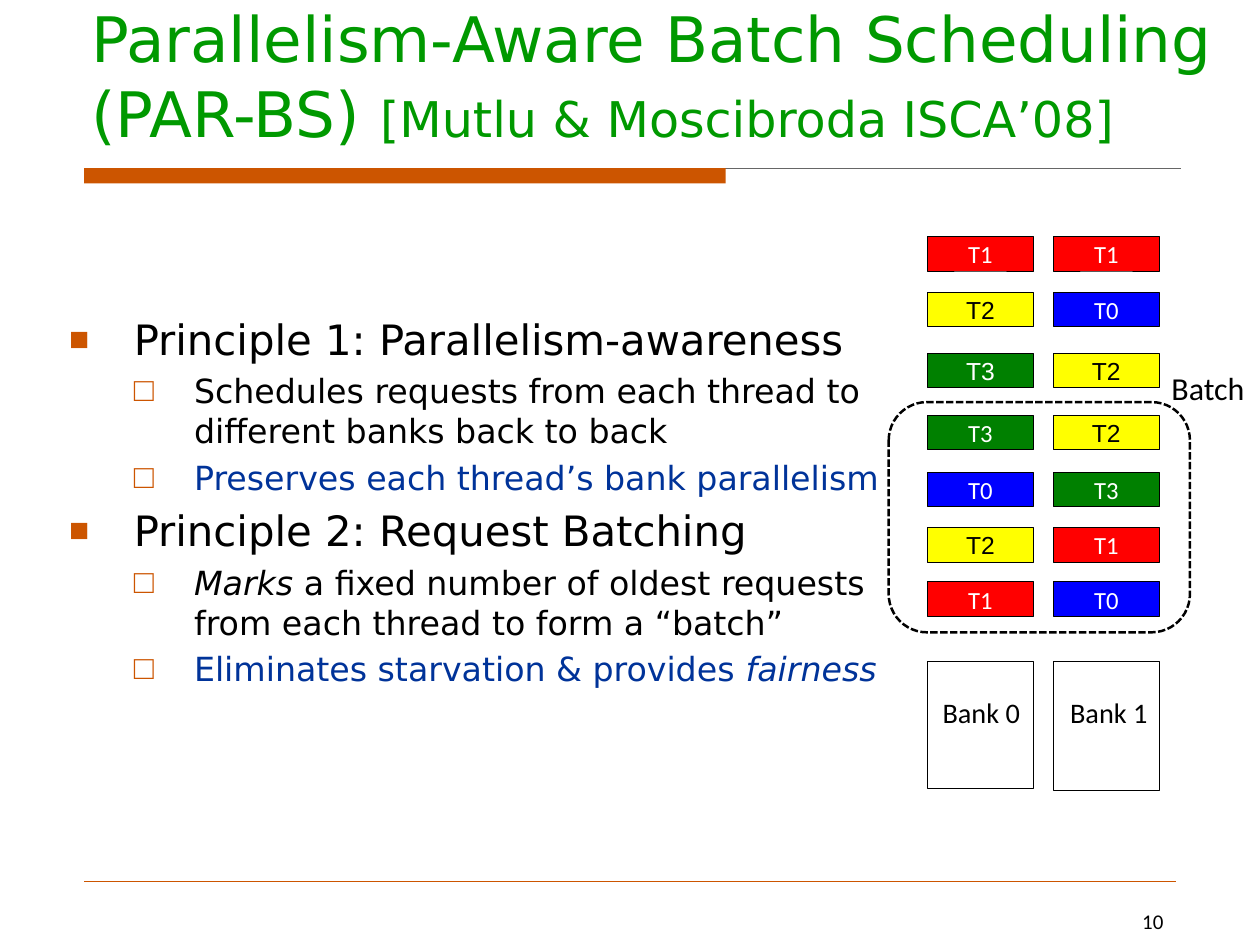
from lxml import etree
from pptx import Presentation
from pptx import util as u
from pptx.dml.color import RGBColor
from pptx.enum import dml, shapes, text
from pptx.oxml import ns

PX = 9144  # EMU per px, 100 px to the inch
BLACK = RGBColor(0, 0, 0)
WHITE = RGBColor(255, 255, 255)
GREY = RGBColor(0x66, 0x66, 0x66)
ORANGE = RGBColor(0xCC, 0x55, 0x00)
TITLE_GREEN = RGBColor(0, 0x99, 0)
NAVY = RGBColor(0, 0x33, 0x99)
RED = RGBColor(255, 0, 0)
BLUE = RGBColor(0, 0, 255)
YELLOW = RGBColor(255, 255, 0)
GREEN = RGBColor(0, 0x80, 0)

SANS, CALIBRI, ARIAL = "DejaVu Sans", "Calibri", "Arial"
MARGINS = dict(margin_left=14 * PX, margin_right=14 * PX,
               margin_top=7 * PX, margin_bottom=7 * PX)

# thread: fill, text colour, font
THREADS = {
    "T0": (BLUE, WHITE, CALIBRI),
    "T1": (RED, WHITE, CALIBRI),
    "T2": (YELLOW, BLACK, ARIAL),
    "T3": (GREEN, WHITE, CALIBRI),
}
# top within the queue, threads waiting for bank 0 and bank 1, font if special
REQUEST_ROWS = [
    (0, ("T1", "T1"), None),
    (63, ("T2", "T0"), None),
    (132, ("T3", "T2"), ARIAL),
    (202, ("T3", "T2"), None),
    (266, ("T0", "T3"), None),
    (329, ("T2", "T1"), None),
    (390, ("T1", "T0"), None),
]
# bank name, label left within the bank, bank height
BANKS = [("Bank 0", 2, 143), ("Bank 1", 4, 146)]
BANK_PITCH, BANK_WIDTH = 142, 119

# level: indent, hanging, bullet, bullet size in percent, text size
LEVELS = [(73, 73, "■", 80, 34), (141, 68, "□", 100, 27)]
# level, colour, runs of (text, italic)
PRINCIPLES = [
    (0, BLACK, [("Principle 1: Parallelism-awareness", False)]),
    (1, BLACK, [("Schedules requests from each thread to different banks back to back", False)]),
    (1, NAVY, [("Preserves each thread’s bank parallelism", False)]),
    (0, BLACK, [("Principle 2: Request Batching", False)]),
    (1, BLACK, [("Marks ", True),
                ("a fixed number of oldest requests from each thread to form a “batch”", False)]),
    (1, NAVY, [("Eliminates starvation & provides ", False), ("fairness", True)]),
]


def set_format(target, **values):
    for name, value in values.items():
        setattr(target, name, value)


def scaled(*lengths):
    return [length * PX for length in lengths]


def add_run(paragraph, words, size, font, colour, italic=False):
    run = paragraph.add_run()
    run.text = words
    set_format(run.font, size=u.Pt(size), name=font, italic=italic)
    run.font.color.rgb = colour


def place(placeholder, box, anchor):
    left, top, width, height = scaled(*box)
    set_format(placeholder, left=left, top=top, width=width, height=height)
    set_format(placeholder.text_frame, word_wrap=True, vertical_anchor=anchor,
               auto_size=text.MSO_AUTO_SIZE.NONE, **MARGINS)
    return placeholder.text_frame


def add_label(slide, box, words, size, align, wrap=False):
    frame = slide.shapes.add_textbox(*scaled(*box)).text_frame
    set_format(frame, word_wrap=wrap, **MARGINS)
    frame.paragraphs[0].alignment = align
    add_run(frame.paragraphs[0], words, size, CALIBRI, BLACK)


def add_box(slide, box, fill=None, line=BLACK, kind=shapes.MSO_SHAPE.RECTANGLE):
    shape = slide.shapes.add_shape(kind, *scaled(*box))
    shape.shadow.inherit = False
    if fill is None:
        shape.fill.background()
    else:
        shape.fill.solid()
        shape.fill.fore_color.rgb = fill
    if line is None:
        shape.line.fill.background()
    else:
        shape.line.color.rgb = line
        shape.line.width = u.Pt(0.75)
    return shape


def add_rule(slide, left, top, width, colour, points):
    rule = slide.shapes.add_connector(shapes.MSO_CONNECTOR.STRAIGHT,
                                      *scaled(left, top, left + width, top))
    rule.line.color.rgb = colour
    rule.line.width = u.Pt(points)
    etree.SubElement(rule._element.spPr, ns.qn("a:effectLst"))


def add_bullet(paragraph, level):
    indent, hanging, character, percent, _ = LEVELS[level]
    properties = paragraph._p.get_or_add_pPr()
    properties.set("marL", str(indent * PX))
    properties.set("indent", str(-hanging * PX))
    colour = etree.SubElement(properties, ns.qn("a:buClr"))
    etree.SubElement(colour, ns.qn("a:srgbClr"), val=str(ORANGE))
    etree.SubElement(properties, ns.qn("a:buSzPct"), val=str(percent * 1000))
    etree.SubElement(properties, ns.qn("a:buFont"), typeface=ARIAL)
    etree.SubElement(properties, ns.qn("a:buChar"), char=character)


def draw_title(slide, box):
    paragraph = place(slide.shapes.title, box, text.MSO_ANCHOR.BOTTOM).paragraphs[0]
    paragraph.alignment = text.PP_ALIGN.LEFT
    add_run(paragraph, "Parallelism-Aware Batch Scheduling (PAR-BS) ", 51, SANS, TITLE_GREEN)
    add_run(paragraph, "[Mutlu & Moscibroda ISCA’08]", 40, SANS, TITLE_GREEN)


def draw_divider(slide, box):
    left, top, width, height = box
    add_rule(slide, left, top, width, GREY, 0.75)
    add_box(slide, (left, top, 724, height), ORANGE, None)


def draw_principles(slide, box):
    frame = place(slide.placeholders[1], box, text.MSO_ANCHOR.TOP)
    for index, (level, colour, runs) in enumerate(PRINCIPLES):
        paragraph = frame.add_paragraph() if index else frame.paragraphs[0]
        paragraph.level = level
        add_bullet(paragraph, level)
        for words, italic in runs:
            add_run(paragraph, words, LEVELS[level][-1], SANS, colour, italic)


def draw_request(slide, box, thread, special_font):
    fill, colour, font = THREADS[thread]
    frame = add_box(slide, box, fill).text_frame
    set_format(frame, vertical_anchor=text.MSO_ANCHOR.MIDDLE, **MARGINS)
    frame.paragraphs[0].alignment = text.PP_ALIGN.CENTER
    add_run(frame.paragraphs[0], thread, 20, special_font or font, colour)


def draw_queues(slide, box):
    """Request queues of both banks, the batch outline and the banks below."""
    left, top, _, height = box
    for row_top, threads, special_font in REQUEST_ROWS:
        for column, thread in enumerate(threads):
            draw_request(slide, (left + column * BANK_PITCH, top + row_top, BANK_WIDTH, 39),
                         thread, special_font)
    for column, (name, label_left, bank_height) in enumerate(BANKS):
        bank_left, bank_top = left + column * BANK_PITCH, top + height - 146
        add_box(slide, (bank_left, bank_top, BANK_WIDTH, bank_height))
        add_label(slide, (bank_left + label_left, bank_top + 31, 117, 53), name, 23,
                  text.PP_ALIGN.CENTER)
    batch = add_box(slide, (left - 44, top + 187, 340, 260),
                    kind=shapes.MSO_SHAPE.ROUNDED_RECTANGLE)
    set_format(batch.line, width=u.Pt(2), dash_style=dml.MSO_LINE.SQUARE_DOT)
    add_label(slide, (left + 261, top + 142, 111, 58), "Batch", 26, text.PP_ALIGN.LEFT)


def draw_footer(slide, box):
    left, top, width, _ = box
    add_rule(slide, left, top, width, ORANGE, 0.25)
    add_label(slide, (left + width - 308, top + 24, 308, 26), "10", 17,
              text.PP_ALIGN.RIGHT, wrap=True)


def main():
    presentation = Presentation()
    set_format(presentation, slide_width=1422 * PX, slide_height=1067 * PX)
    slide = presentation.slides.add_slide(presentation.slide_layouts[1])
    draw_divider(slide, (95, 190, 1238, 17))
    draw_title(slide, (89, 47, 1333, 130))
    draw_principles(slide, (64, 347, 962, 471))
    draw_queues(slide, (1047, 267, 261, 626))
    draw_footer(slide, (95, 995, 1232, 50))
    presentation.save("out.pptx")


if __name__ == "__main__":
    main()
